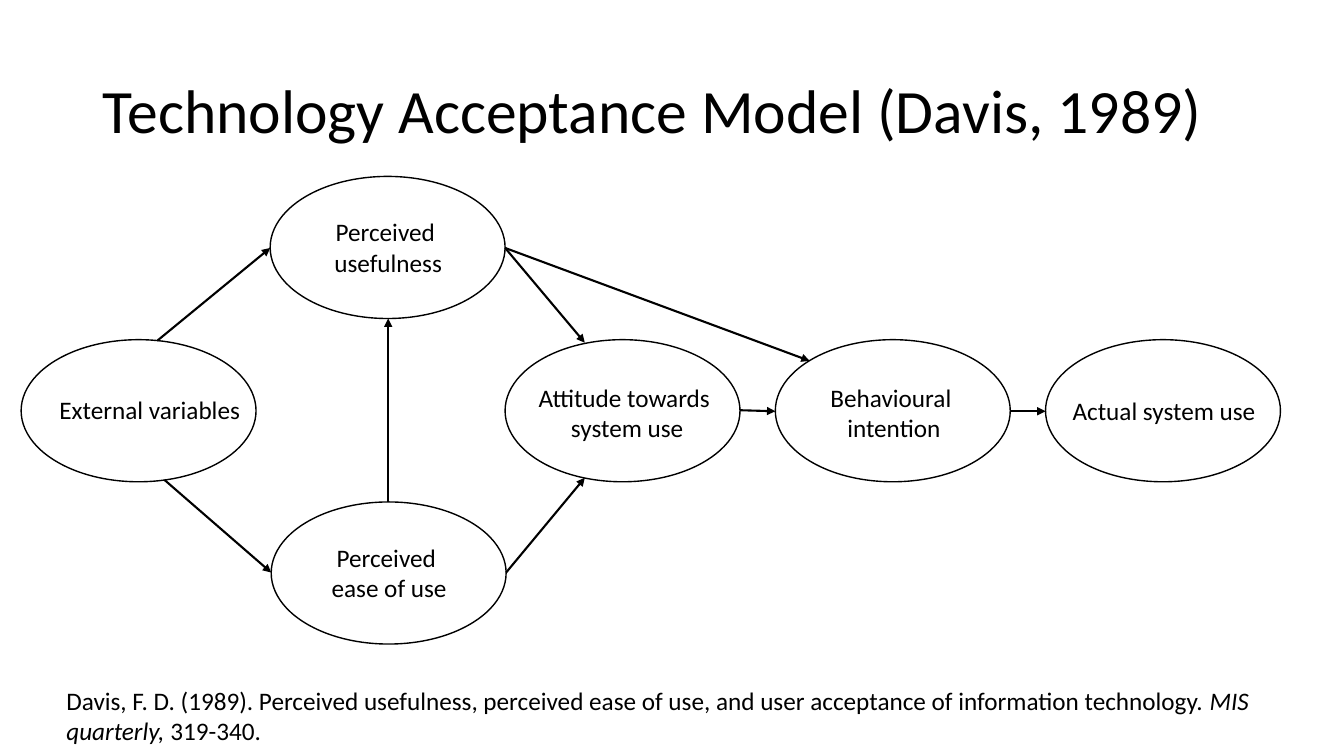
from lxml.etree import SubElement
from pptx import Presentation
from pptx.dml.color import RGBColor
from pptx.enum.shapes import MSO_CONNECTOR, MSO_SHAPE
from pptx.enum.text import MSO_ANCHOR, MSO_AUTO_SIZE, PP_ALIGN
from pptx.oxml.ns import qn
from pptx.util import Pt

PX = 9144  # 100 px to the inch
COLORS = {"ink": "000000"}
INK = RGBColor.from_string(COLORS["ink"])
OVAL_WIDTH, OVAL_HEIGHT = 233, 141


def emu(*lengths):
    return [length * PX for length in lengths]


def set_font(paragraph, size):
    paragraph.font.name = "Calibri"
    paragraph.font.size = Pt(size)
    paragraph.font.color.rgb = INK


presentation = Presentation()
presentation.slide_width, presentation.slide_height = emu(1333, 750)
slide = presentation.slides.add_slide(presentation.slide_layouts[5])
shapes = slide.shapes

# Title
title = shapes.title
title.left, title.top, title.width, title.height = emu(92, 40, 1150, 145)
title.text_frame.text = "Technology Acceptance Model (Davis, 1989)"
title.text_frame.auto_size = MSO_AUTO_SIZE.NONE
title.text_frame.vertical_anchor = MSO_ANCHOR.MIDDLE
paragraph = title.text_frame.paragraphs[0]
paragraph.alignment = PP_ALIGN.LEFT
paragraph.line_spacing = 0.9
set_font(paragraph, 44)

# Reference
reference = shapes.add_textbox(*emu(56, 675, 1262, 71))
reference.text_frame.word_wrap = True
paragraph = reference.text_frame.paragraphs[0]
set_font(paragraph, 18)
for text, italic in [
    ("Davis, F. D. (1989). Perceived usefulness, perceived ease of use, "
     "and user acceptance of information technology. ", False),
    ("MIS quarterly, ", True),
    ("319-340.", False),
]:
    run = paragraph.add_run()
    run.text = text
    run.font.italic = italic

# Constructs: oval position, label box, label
constructs = [
    ((769, 337), (813, 374, 147, 71), "Behavioural \nintention"),
    ((501, 337), (523, 374, 198, 71), "Attitude towards \nsystem use"),
    ((268, 175), (321, 210, 128, 71), "Perceived \nusefulness"),
    ((269, 498), (318, 533, 136, 71), "Perceived \nease of use"),
    ((21, 337), (49, 386, 201, 40), "External variables"),
    ((1037, 337), (1054, 387, 203, 40), "Actual system use"),
]
for position, label_box, text in constructs:
    oval = shapes.add_shape(MSO_SHAPE.OVAL, *emu(*position, OVAL_WIDTH, OVAL_HEIGHT))
    oval.shadow.inherit = False
    oval.fill.background()
    oval.line.color.rgb = INK
    oval.line.width = Pt(1)

    label = shapes.add_textbox(*emu(*label_box))
    label.text_frame.word_wrap = False
    label.text_frame.text = text
    for paragraph in label.text_frame.paragraphs:
        paragraph.alignment = PP_ALIGN.CENTER if "\n" in text else PP_ALIGN.LEFT
        set_font(paragraph, 18)

# Arrows between constructs: start and end points
arrows = [
    (156, 338, 268, 246),
    (163, 476, 269, 568),
    (385, 498, 385, 316),
    (501, 246, 580, 340),
    (502, 568, 580, 474),
    (501, 246, 803, 358),
    (1002, 408, 1037, 408),
    (734, 407, 769, 408),
]
for points in arrows:
    arrow = shapes.add_connector(MSO_CONNECTOR.STRAIGHT, *emu(*points))
    arrow.line.color.rgb = INK
    arrow.line.width = Pt(1.5)
    SubElement(arrow.line._get_or_add_ln(), qn("a:tailEnd"), type="triangle")
    SubElement(arrow._element.spPr, qn("a:effectLst"))

presentation.save("out.pptx")
